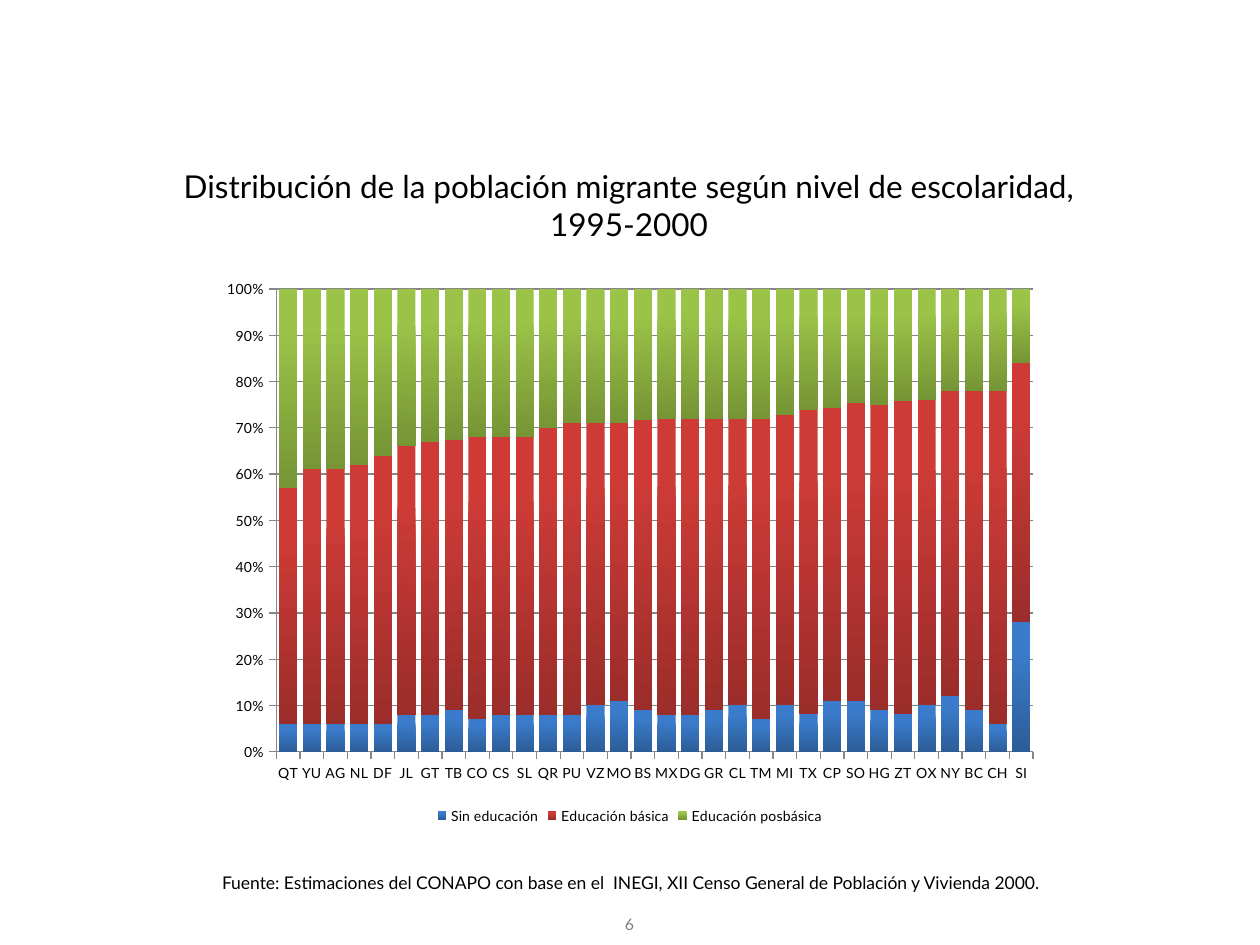
"""Build a slide with a stacked chart of migrants by level of schooling."""
from typing import NamedTuple

from lxml.etree import SubElement
from pptx import Presentation
from pptx.chart.data import CategoryChartData as Data
from pptx.dml.color import RGBColor as Rgb
from pptx.enum.chart import XL_CHART_TYPE as Kind
from pptx.enum.chart import XL_LEGEND_POSITION as Place
from pptx.enum.chart import XL_TICK_MARK as Tick
from pptx.enum.text import MSO_ANCHOR as Anchor
from pptx.enum.text import PP_ALIGN as Align
from pptx.oxml import parse_xml
from pptx.oxml.ns import nsdecls, qn
from pptx.util import Pt

PX = 914400 / 126
FONT = "Lato"
COLORS = {
    "ink": "000000", "gray": "808080", "grid": "868686",
    "blue": "3A7CCB", "navy": "2C5D98",
    "red": "CE3B37", "wine": "9B2D2A",
    "lime": "9BC348", "moss": "769535",
}


class Box(NamedTuple):
    left: int
    top: int
    width: int
    height: int


class Label(NamedTuple):
    box: Box
    text: str
    size: int
    color: str = "ink"


class Level(NamedTuple):
    name: str
    light: str
    dark: str
    values: tuple[int, ...]


LABELS = (
    Label(Box(161, 156, 936, 98),
          "Distribución de la población migrante según nivel de escolaridad, 1995-2000", 18),
    Label(Box(184, 866, 893, 34),
          "Fuente: Estimaciones del CONAPO con base en el  INEGI, "
          "XII Censo General de Población y Vivienda 2000.", 10),
    Label(Box(561, 903, 137, 42), "6", 9, "gray"),
)
CHART = Box(210, 270, 840, 559)
PLOT = Box(276, 289, 757, 463)
STATES = ("QT YU AG NL DF JL GT TB CO CS SL QR PU VZ MO BS "
          "MX DG GR CL TM MI TX CP SO HG ZT OX NY BC CH SI").split()
LEVELS = (
    Level("Sin educación", "blue", "navy",
          (6, 6, 6, 6, 6, 8, 8, 9, 7, 8, 8, 8, 8, 10, 11, 9,
           8, 8, 9, 10, 7, 10, 8, 11, 11, 9, 8, 10, 12, 9, 6, 28)),
    Level("Educación básica", "red", "wine",
          (51, 55, 55, 56, 58, 58, 59, 59, 61, 60, 60, 62, 63, 61, 60, 62,
           64, 64, 63, 62, 65, 62, 65, 64, 65, 66, 67, 66, 66, 69, 72, 56)),
    Level("Educación posbásica", "lime", "moss",
          (43, 39, 39, 38, 36, 34, 33, 33, 32, 32, 32, 30, 29, 29, 29, 28,
           28, 28, 28, 28, 28, 27, 26, 26, 25, 25, 24, 24, 22, 22, 22, 16)),
)


def emu(px: int) -> int:
    return round(px * PX)


def ink(name: str) -> Rgb:
    return Rgb.from_string(COLORS[name])


def style(font, size: int, color: str) -> None:
    font.name, font.size, font.bold = FONT, Pt(size), False
    font.color.rgb = ink(color)


def add_label(slide, label: Label) -> None:
    frame = slide.shapes.add_textbox(*map(emu, label.box)).text_frame
    frame.word_wrap = True
    frame.vertical_anchor = Anchor.MIDDLE
    para = frame.paragraphs[0]
    para.alignment = Align.CENTER
    run = para.add_run()
    run.text = label.text
    style(run.font, label.size, label.color)


def set_plot(chart) -> None:
    area = chart._chartSpace.chart.plotArea
    for old in area.findall(qn("c:layout")):
        area.remove(old)
    layout = parse_xml(f"<c:layout {nsdecls('c')}><c:manualLayout/></c:layout>")
    rules = {
        "layoutTarget": "inner", "xMode": "edge", "yMode": "edge",
        "x": round((PLOT.left - CHART.left) / CHART.width, 3),
        "y": round((PLOT.top - CHART.top) / CHART.height, 3),
        "w": round(PLOT.width / CHART.width, 3),
        "h": round(PLOT.height / CHART.height, 3),
    }
    for key, value in rules.items():
        SubElement(layout[0], qn(f"c:{key}")).set("val", str(value))
    area.insert(0, layout)


def set_axes(chart) -> None:
    value = chart.value_axis
    value.minimum_scale, value.maximum_scale, value.major_unit = 0, 1, 0.1
    value.has_major_gridlines = True
    value.tick_labels.number_format = "0%"
    value.tick_labels.number_format_is_linked = False
    for axis in (value, chart.category_axis):
        axis.major_tick_mark, axis.minor_tick_mark = Tick.OUTSIDE, Tick.NONE
        style(axis.tick_labels.font, 8, "ink")
    for part in (value, chart.category_axis, value.major_gridlines):
        part.format.line.color.rgb = ink("grid")
        part.format.line.width = Pt(0.75)


def set_fill(bars, level: Level) -> None:
    bars.invert_if_negative = False
    fill = bars.format.fill
    fill.gradient()
    fill.gradient_angle = 270
    for stop, color, place in zip(fill.gradient_stops, (level.light, level.dark), (0.2, 1)):
        stop.color.rgb = ink(color)
        stop.position = place


def add_bars(slide) -> None:
    data = Data(number_format="0")
    data.categories = STATES
    for level in LEVELS:
        data.add_series(level.name, level.values)
    chart = slide.shapes.add_chart(
        Kind.COLUMN_STACKED_100, *map(emu, CHART), data).chart
    style(chart.font, 8, "ink")
    chart.has_title = False
    chart.has_legend = True
    chart.legend.position = Place.BOTTOM
    chart.legend.include_in_layout = False
    style(chart.legend.font, 8, "ink")
    plot = chart.plots[0]
    plot.gap_width, plot.overlap, plot.vary_by_categories = 30, 100, False
    for bars, level in zip(plot.series, LEVELS):
        set_fill(bars, level)
    set_axes(chart)
    set_plot(chart)


def main() -> None:
    deck = Presentation()
    deck.slide_width, deck.slide_height = emu(1260), emu(945)
    slide = deck.slides.add_slide(deck.slide_layouts[6])
    add_bars(slide)
    for label in LABELS:
        add_label(slide, label)
    deck.save("out.pptx")


if __name__ == "__main__":
    main()
